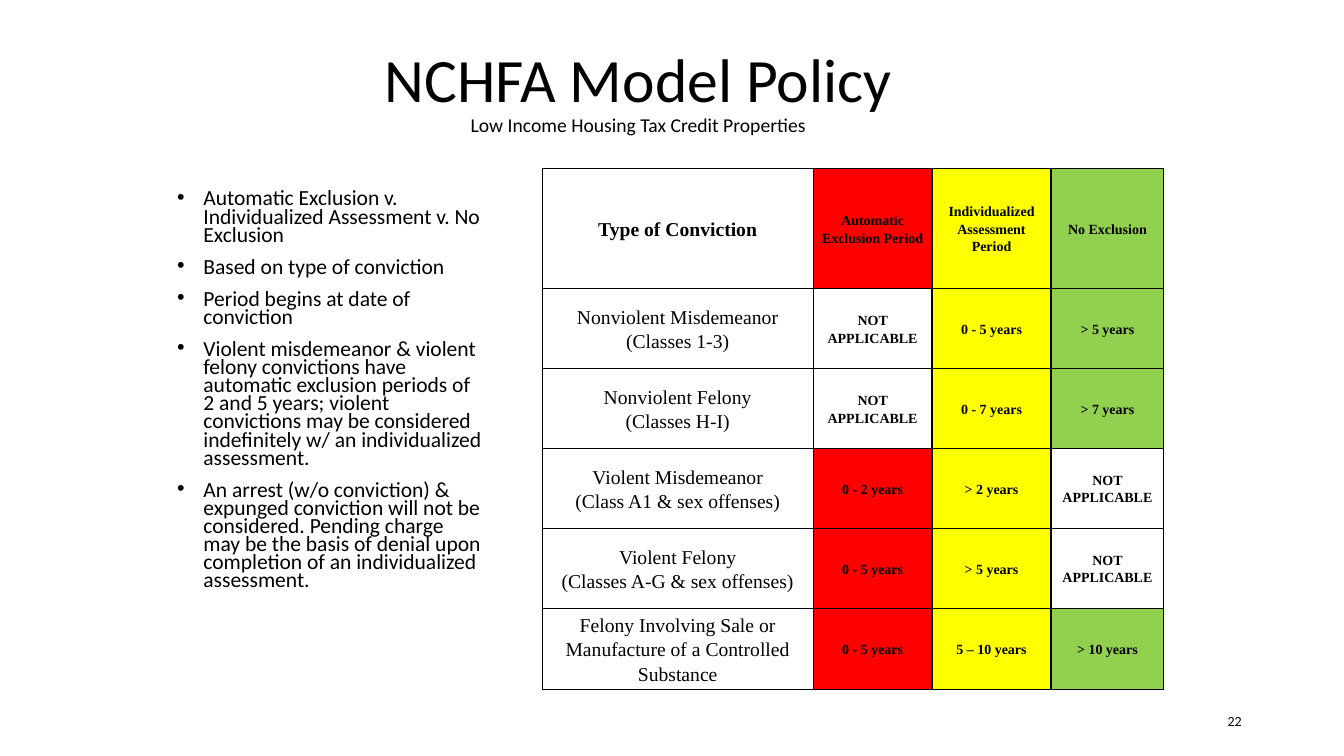
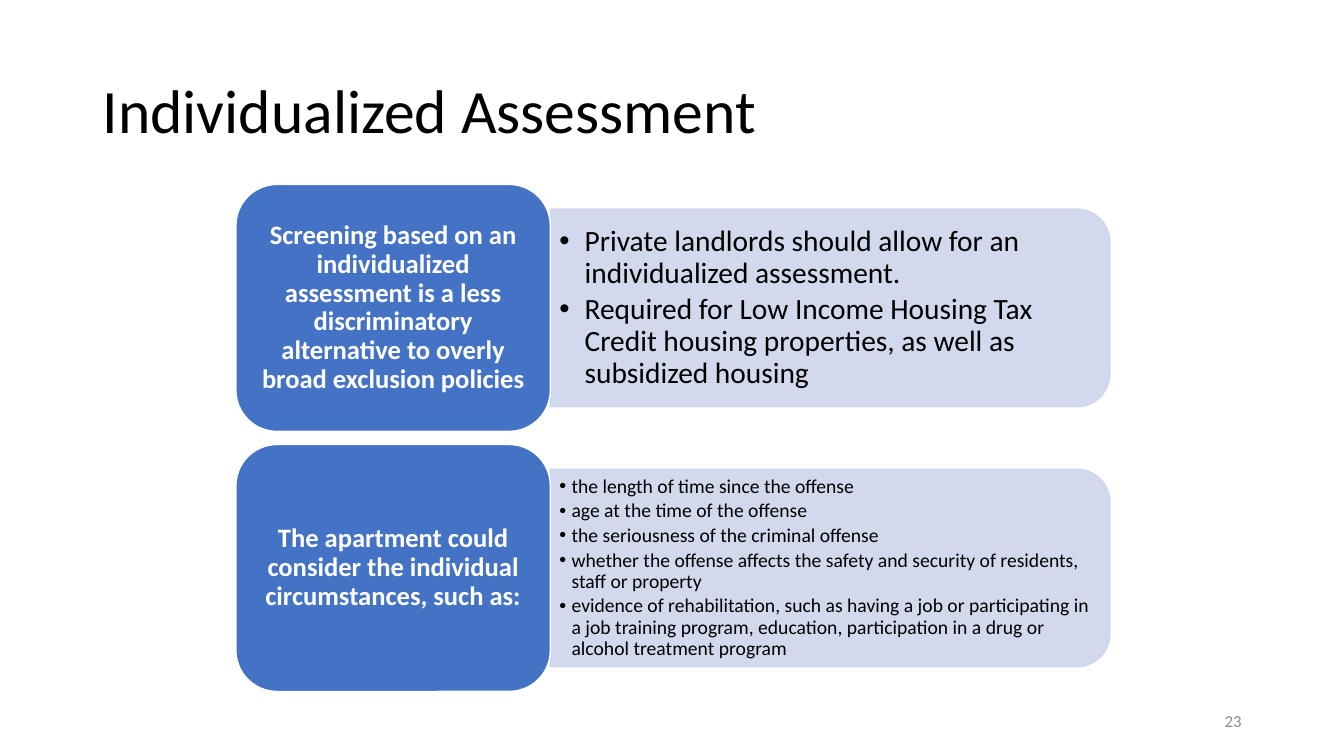
"""Build two slides on conviction screening: a policy table and the individualized assessment."""
from dataclasses import dataclass

from lxml import etree
from pptx import Presentation
from pptx import util as u
from pptx.dml.color import RGBColor
from pptx.enum import shapes, text
from pptx.oxml.ns import qn


@dataclass(frozen=True)
class Theme:
    sans: str = "Calibri"
    serif: str = "Times New Roman"
    black: str = "000000"
    white: str = "FFFFFF"
    gray: str = "8C8C8C"
    red: str = "FF0000"
    yellow: str = "FFFF00"
    green: str = "92D050"
    blue: str = "4472C4"
    pale: str = "CFD5EA"
    title: float = 44
    label: float = 19
    points: float = 15.4
    normal: float = 14
    small: float = 10


theme = Theme()
center, right = text.PP_ALIGN.CENTER, text.PP_ALIGN.RIGHT
middle, top_anchor = text.MSO_ANCHOR.MIDDLE, text.MSO_ANCHOR.TOP

deck = Presentation()
deck.slide_width, deck.slide_height = u.Inches(13.33), u.Inches(7.5)


def place(left, top, width, height):
    """Turn percentages of the slide into lengths."""
    across, down = deck.slide_width / 100, deck.slide_height / 100
    return [u.Emu(round(share * side)) for share, side in
            zip((left, top, width, height), (across, down, across, down))]


def write(frame, lines, size=theme.normal, color=theme.black, font=theme.sans, bold=False,
          align=None, anchor=middle, spacing=1.0, before=0, after=0, indent=0):
    """Add one paragraph per line, bulleted when an indent is given."""
    frame.word_wrap = True
    frame.vertical_anchor = anchor
    for line in lines:
        para = frame.paragraphs[0] if not frame.text else frame.add_paragraph()
        para.alignment = align
        para.line_spacing = spacing
        para.space_before, para.space_after = u.Pt(before), u.Pt(after)
        if indent:
            props = para._p.get_or_add_pPr()
            props.set("marL", str(u.Inches(indent)))
            props.set("indent", str(-u.Inches(indent)))
            etree.SubElement(props, qn("a:buFont")).set("typeface", "Arial")
            etree.SubElement(props, qn("a:buChar")).set("char", "•")
        span = para.add_run()
        span.text = line
        span.font.name, span.font.size, span.font.bold = font, u.Pt(size), bold
        span.font.color.rgb = RGBColor.from_string(color)


pages = []
for number, size, color, title, title_area, align in (
    ("22", theme.small, theme.black, "NCHFA Model Policy", (16.25, 2.27, 62.5, 20), center),
    ("23", 12, theme.gray, "Individualized Assessment", (6.9, 5.33, 86.25, 19.33), None),
):
    page = deck.slides.add_slide(deck.slide_layouts[6])
    heading = page.shapes.add_textbox(*place(*title_area)).text_frame
    write(heading, [title], size=theme.title, align=align, spacing=0.9)
    footer = page.shapes.add_textbox(*place(70.63, 92.67, 22.5, 5.33)).text_frame
    write(footer, [number], size=size, color=color, align=right)
    pages.append((page, heading))

(policy, policy_heading), (assessment, _) = pages

write(policy_heading, ["Low Income Housing Tax Credit Properties"], align=center, spacing=0.9)

rules = policy.shapes.add_textbox(*place(12.45, 24.67, 24.38, 69.07)).text_frame
write(rules, [
    "Automatic Exclusion v. Individualized Assessment v. No Exclusion",
    "Based on type of conviction",
    "Period begins at date of conviction",
    "Violent misdemeanor & violent felony convictions have automatic exclusion periods of "
    "2 and 5 years; violent convictions may be considered indefinitely w/ an individualized "
    "assessment.",
    "An arrest (w/o conviction) & expunged conviction will not be considered. Pending charge "
    "may be the basis of denial upon completion of an individualized assessment.",
], size=theme.points, anchor=top_anchor, spacing=0.7, before=10, indent=0.26)

excluded = "NOT APPLICABLE"
convictions = [
    ("Type of Conviction", "Automatic Exclusion Period", "Individualized Assessment Period",
     "No Exclusion"),
    ("Nonviolent Misdemeanor\n(Classes 1-3)", excluded, "0 - 5 years", "> 5 years"),
    ("Nonviolent Felony\n(Classes H-I)", excluded, "0 - 7 years", "> 7 years"),
    ("Violent Misdemeanor\n(Class A1 & sex offenses)", "0 - 2 years", "> 2 years", excluded),
    ("Violent Felony\n(Classes A-G & sex offenses)", "0 - 5 years", "> 5 years", excluded),
    ("Felony Involving Sale or Manufacture of a Controlled Substance", "0 - 5 years",
     "5 – 10 years", "> 10 years"),
]
column_shares = (20.15, 8.85, 8.85, 8.4)
row_shares = (15.87, 10.58, 10.58, 10.58, 10.58, 10.7)
column_fills = (theme.white, theme.red, theme.yellow, theme.green)

table = policy.shapes.add_table(
    len(row_shares), len(column_shares),
    *place(40.35, 22.27, sum(column_shares), sum(row_shares))).table
table.first_row = table.horz_banding = False
for column, share in zip(table.columns, column_shares):
    column.width = place(0, 0, share, 0)[2]
for row, share in zip(table.rows, row_shares):
    row.height = place(0, 0, 0, share)[3]

for r, entries in enumerate(convictions):
    for c, entry in enumerate(entries):
        cell = table.cell(r, c)
        cell.margin_left = cell.margin_right = u.Inches(0.07)
        cell.margin_top = cell.margin_bottom = 0
        cell.vertical_anchor = middle
        props = cell._tc.get_or_add_tcPr()
        for side in ("a:lnL", "a:lnR", "a:lnT", "a:lnB"):
            border = etree.SubElement(props, qn(side), w=str(u.Pt(1)))
            paint = etree.SubElement(border, qn("a:solidFill"))
            etree.SubElement(paint, qn("a:srgbClr"), val=theme.black)
        cell.fill.solid()
        cell.fill.fore_color.rgb = RGBColor.from_string(
            theme.white if entry == excluded else column_fills[c])
        write(cell.text_frame, entry.split("\n"), size=theme.small if c else theme.normal,
              font=theme.serif, bold=r == 0 or c > 0, align=center, spacing=1.15)

steps = [
    ("Screening based on an individualized assessment is a less discriminatory alternative to "
     "overly broad exclusion policies", 21, 0.25, [
         "Private landlords should allow for an individualized assessment.",
         "Required for Low Income Housing Tax Credit housing properties, as well as "
         "subsidized housing"]),
    ("The apartment could consider the individual circumstances, such as:", 14, 0.12, [
        "the length of time since the offense",
        "age at the time of the offense",
        "the seriousness of the criminal offense",
        "whether the offense affects the safety and security of residents, staff or property",
        "evidence of rehabilitation, such as having a job or participating in a job training "
        "program, education, participation in a drug or alcohol treatment program"]),
]
first_top, pitch, panel_drop = 24.4, 34.4, 3.27

for index, (label, size, indent, points) in enumerate(steps):
    top = first_top + index * pitch
    area = place(40.95, top + panel_drop, 41.63, 26.13)
    left, upper, width, height = area
    shift = (width - height) // 2
    panel = assessment.shapes.add_shape(
        shapes.MSO_SHAPE.ROUND_2_SAME_RECTANGLE, left + shift, upper - shift, height, width)
    panel.rotation = 90
    card = assessment.shapes.add_shape(
        shapes.MSO_SHAPE.ROUNDED_RECTANGLE, *place(17.55, top, 23.4, 32.67))
    for shape, fill, line in ((panel, theme.pale, theme.pale), (card, theme.blue, theme.white)):
        shape.shadow.inherit = False
        shape.fill.solid()
        shape.fill.fore_color.rgb = RGBColor.from_string(fill)
        shape.line.color.rgb = RGBColor.from_string(line)
        shape.line.width = u.Pt(1)
    for tint in panel._element.spPr.iter(qn("a:srgbClr")):
        etree.SubElement(tint, qn("a:alpha"), val="90000")

    frame = card.text_frame
    frame.margin_left = frame.margin_right = u.Inches(0.08)
    frame.margin_top = frame.margin_bottom = u.Inches(0.04)
    write(frame, [label], size=theme.label, color=theme.white, bold=True, align=center,
          spacing=0.9)

    frame = assessment.shapes.add_textbox(*area).text_frame
    frame.margin_left, frame.margin_right = u.Inches(0.09), u.Inches(0.19)
    write(frame, points, size=size, spacing=0.9, after=round(size * 0.17, 1), indent=indent)

deck.save("out.pptx")
